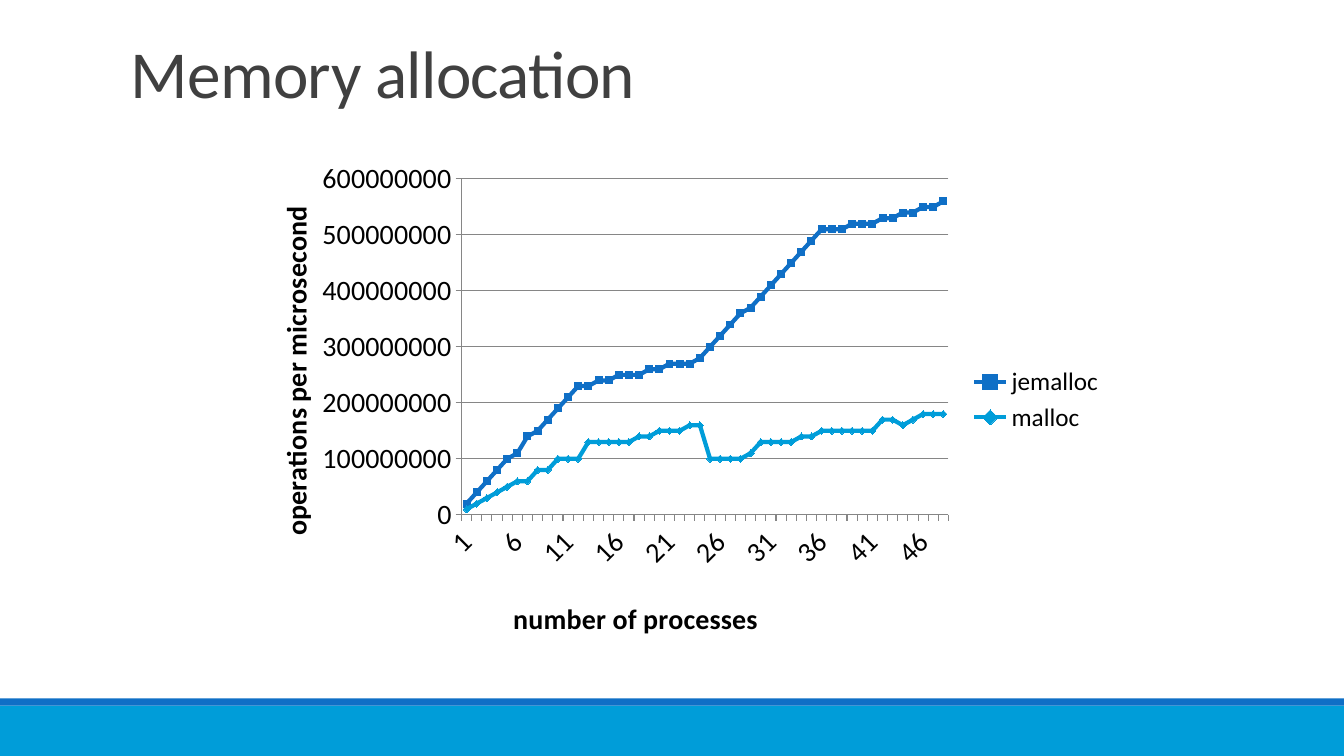
from lxml import etree
from pptx import Presentation
from pptx.chart.data import CategoryChartData
from pptx.dml.color import RGBColor
from pptx.enum.chart import XL_CHART_TYPE, XL_LEGEND_POSITION, XL_MARKER_STYLE, XL_TICK_MARK
from pptx.enum.shapes import MSO_SHAPE
from pptx.enum.text import MSO_ANCHOR
from pptx.oxml.ns import qn
from pptx.util import Cm, Pt

LINE_MARKERS = XL_CHART_TYPE.LINE_MARKERS
LEGEND_RIGHT = XL_LEGEND_POSITION.RIGHT
SQUARE, DIAMOND = XL_MARKER_STYLE.SQUARE, XL_MARKER_STYLE.DIAMOND
TICK_OUTSIDE, TICK_NONE = XL_TICK_MARK.OUTSIDE, XL_TICK_MARK.NONE
RECTANGLE = MSO_SHAPE.RECTANGLE
BOTTOM = MSO_ANCHOR.BOTTOM

FONT = "Calibri"
BLUE, CYAN, GREY, DARK, BLACK = "0F6FC6", "009DD9", "868686", "404040", "000000"
SLIDE_WIDTH, SLIDE_HEIGHT = 33.87, 19.05

HEADING = "Memory allocation"
PROCESSES_TITLE = "number of processes"
OPERATIONS_TITLE = "operations per microsecond"

# Throughput in units of ten million operations, for 1 to 48 processes
UNIT = 10_000_000
ALLOCATORS = [
    ("jemalloc", BLUE, SQUARE,
     [2, 4, 6, 8, 10, 11, 14, 15, 17, 19, 21, 23,
      23, 24, 24, 25, 25, 25, 26, 26, 27, 27, 27, 28,
      30, 32, 34, 36, 37, 39, 41, 43, 45, 47, 49, 51,
      51, 51, 52, 52, 52, 53, 53, 54, 54, 55, 55, 56]),
    ("malloc", CYAN, DIAMOND,
     [1, 2, 3, 4, 5, 6, 6, 8, 8, 10, 10, 10,
      13, 13, 13, 13, 13, 14, 14, 15, 15, 15, 16, 16,
      10, 10, 10, 10, 11, 13, 13, 13, 13, 14, 14, 15,
      15, 15, 15, 15, 15, 17, 17, 16, 17, 18, 18, 18]),
]
# top, height, colour
FOOTER_BANDS = [(17.78, 1.27, CYAN), (17.6, 0.18, BLUE)]


def rgb(value):
    return RGBColor.from_string(value)


def style_font(font, size, color=BLACK, bold=False):
    font.name, font.size, font.bold = FONT, Pt(size), bold
    font.color.rgb = rgb(color)


def write(frame, text, size, color=BLACK, bold=False, line_spacing=None, tracking=None):
    """Put one formatted run in the frame's first paragraph."""
    paragraph = frame.paragraphs[0]
    if line_spacing:
        paragraph.line_spacing = line_spacing
    run = paragraph.add_run()
    run.text = text
    style_font(run.font, size, color, bold)
    if tracking is not None:
        run.font._element.set("spc", str(tracking))


def place(element, index, **fractions):
    """Give a chart part a manual layout in fractions of the chart."""
    old = element.find(qn("c:layout"))
    if old is not None:
        element.remove(old)
    layout = etree.Element(qn("c:layout"))
    manual = etree.SubElement(layout, qn("c:manualLayout"))
    if "w" in fractions:
        etree.SubElement(manual, qn("c:layoutTarget")).set("val", "inner")
    for side in "xy":
        etree.SubElement(manual, qn(f"c:{side}Mode")).set("val", "edge")
    for key, fraction in fractions.items():
        etree.SubElement(manual, qn(f"c:{key}")).set("val", str(fraction))
    element.insert(index, layout)


def style_axis(axis, title, rotation, x, y):
    axis.major_tick_mark, axis.minor_tick_mark = TICK_OUTSIDE, TICK_NONE
    axis.format.line.color.rgb = rgb(GREY)
    style_font(axis.tick_labels.font, 20)
    frame = axis.axis_title.text_frame
    write(frame, title, 20, bold=True)
    body = frame._txBody.find(qn("a:bodyPr"))
    body.set("rot", str(rotation * 60000))
    body.set("vert", "horz")
    place(axis.axis_title._element, 1, x=x, y=y)


def add_footer(slide):
    for top, height, color in FOOTER_BANDS:
        band = slide.shapes.add_shape(RECTANGLE, 0, Cm(top), Cm(SLIDE_WIDTH), Cm(height))
        band.shadow.inherit = False
        band.fill.solid()
        band.fill.fore_color.rgb = rgb(color)
        band.line.fill.background()


def add_heading(slide):
    frame = slide.shapes.add_textbox(Cm(3.05), Cm(0.79), Cm(27.94), Cm(2.16)).text_frame
    frame.word_wrap = True
    frame.vertical_anchor = BOTTOM
    write(frame, HEADING, 48, color=DARK, line_spacing=0.85, tracking=-50)


def add_allocation_chart(slide):
    data = CategoryChartData(number_format="General")
    data.categories = [str(count + 1) for count in range(len(ALLOCATORS[0][3]))]
    for name, _, _, levels in ALLOCATORS:
        data.add_series(name, [level * UNIT for level in levels])
    chart = slide.shapes.add_chart(
        LINE_MARKERS, Cm(5.94), Cm(3.81), Cm(22.15), Cm(12.52), data).chart
    chart.has_title = False
    style_font(chart.font, 10)
    chart.has_legend = True
    chart.legend.position = LEGEND_RIGHT
    chart.legend.include_in_layout = False
    style_font(chart.legend.font, 18)
    chart.plots[0].vary_by_categories = False

    for series, (_, color, marker, _) in zip(chart.plots[0].series, ALLOCATORS):
        series.smooth = False
        series.format.line.color.rgb = rgb(color)
        series.format.line.width = Pt(3)
        series.marker.style, series.marker.size = marker, 5
        series.marker.format.fill.solid()
        series.marker.format.fill.fore_color.rgb = rgb(color)
        series.marker.format.line.color.rgb = rgb(color)

    processes, operations = chart.category_axis, chart.value_axis
    style_axis(processes, PROCESSES_TITLE, 0, x=0.31, y=0.89)
    style_axis(operations, OPERATIONS_TITLE, -90, x=0.04, y=0.1)
    operations.minimum_scale, operations.maximum_scale = 0, 60 * UNIT
    operations.major_unit = 10 * UNIT
    operations.major_gridlines.format.line.color.rgb = rgb(GREY)

    axis = processes._element
    axis.find(qn("c:txPr")).find(qn("a:bodyPr")).set("rot", str(-45 * 60000))
    last = axis.find(qn("c:noMultiLvlLbl"))
    for tag, step in (("c:tickLblSkip", 5), ("c:tickMarkSkip", 1)):
        skip = etree.Element(qn(tag))
        skip.set("val", str(step))
        last.addprevious(skip)
    place(axis.getparent(), 0, x=0.257, y=0.056, w=0.554, h=0.676)


def main():
    deck = Presentation()
    deck.slide_width, deck.slide_height = Cm(SLIDE_WIDTH), Cm(SLIDE_HEIGHT)
    slide = deck.slides.add_slide(deck.slide_layouts[6])
    add_footer(slide)
    add_heading(slide)
    add_allocation_chart(slide)
    deck.save("out.pptx")


if __name__ == "__main__":
    main()
